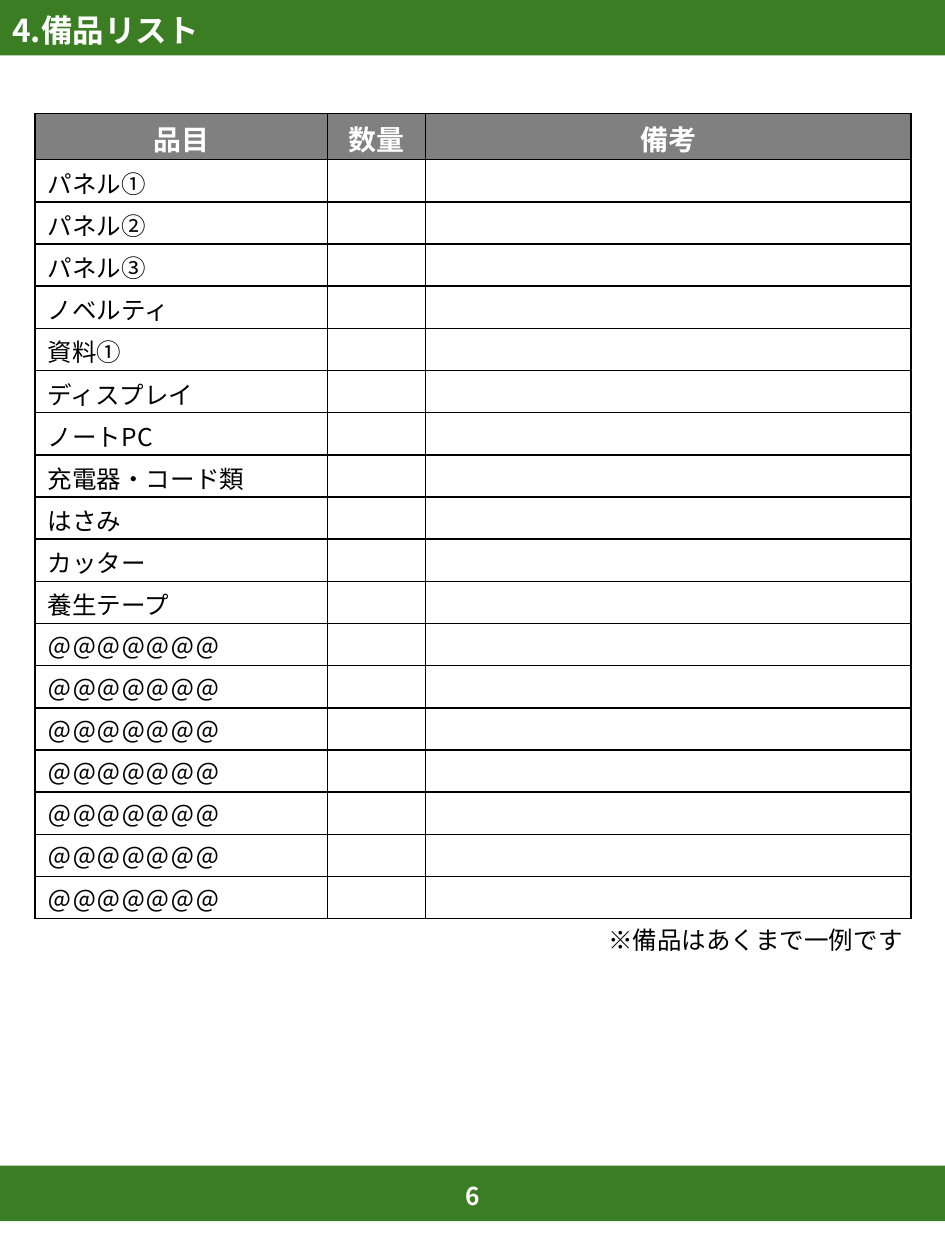
import pptx
import pptx.util
from dataclasses import dataclass
from lxml import etree
from pptx.dml.color import RGBColor
from pptx.enum.shapes import MSO_SHAPE
from pptx.enum.text import MSO_ANCHOR, PP_ALIGN
from pptx.oxml.ns import qn
from pptx.util import Cm


@dataclass(frozen=True)
class Theme:
    font: str = "Noto Sans CJK JP"
    green: str = "3B7D23"
    grey: str = "808080"
    white: str = "FFFFFF"
    black: str = "000000"
    title: int = 18
    head: int = 16
    body: int = 14


T = Theme()
HEADERS = ["品目", "数量", "備考"]
ITEMS = ["パネル①", "パネル②", "パネル③", "ノベルティ", "資料①", "ディスプレイ",
         "ノートPC", "充電器・コード類", "はさみ", "カッター", "養生テープ"]
ITEMS += ["＠＠＠＠＠＠＠"] * 7
COLUMNS = [5.89, 1.98, 9.78]
HEAD_HEIGHT, ROW_HEIGHT = 0.93, 0.85


def rgb(color):
    return RGBColor.from_string(color)


def write(tf, text, size, color, bold=False, align=PP_ALIGN.LEFT):
    p = tf.paragraphs[0]
    p.text = text
    p.alignment = align
    f = p.font
    f.size, f.bold, f.name = pptx.util.Pt(size), bold, T.font
    f.color.rgb = rgb(color)
    # East Asian typeface, next to the Latin one
    latin = p._p.find(".//" + qn("a:latin"))
    ea = etree.Element(qn("a:ea"), typeface=T.font)
    latin.addnext(ea)


def add_text(s, x, y, w, h, text, size, color, bold=False, align=PP_ALIGN.LEFT):
    tf = s.shapes.add_textbox(Cm(x), Cm(y), Cm(w), Cm(h)).text_frame
    tf.word_wrap = True
    tf.vertical_anchor = MSO_ANCHOR.MIDDLE
    tf.margin_top = tf.margin_bottom = 0
    write(tf, text, size, color, bold, align)


def add_band(s, x, y, w, h, text, size, align):
    sp = s.shapes.add_shape(MSO_SHAPE.RECTANGLE, Cm(x), Cm(y), Cm(w), Cm(h))
    sp.shadow.inherit = False
    sp.fill.solid()
    sp.fill.fore_color.rgb = rgb(T.green)
    sp.line.fill.background()
    add_text(s, x, y + 0.05, w, h, text, size, T.white, True, align)


def style_cell(cell, fill):
    cell.vertical_anchor = MSO_ANCHOR.TOP
    cell.margin_top, cell.margin_bottom = Cm(0.1), Cm(0.02)
    # Borders come before the fill in the cell properties
    tcPr = cell._tc.get_or_add_tcPr()
    for side in ("a:lnL", "a:lnR", "a:lnT", "a:lnB"):
        ln = etree.SubElement(tcPr, qn(side), w=str(pptx.util.Pt(1)))
        paint = etree.SubElement(ln, qn("a:solidFill"))
        etree.SubElement(paint, qn("a:srgbClr"), val=T.black)
    cell.fill.solid()
    cell.fill.fore_color.rgb = rgb(fill)


def add_equipment_table(s, x, y):
    rows = [HEADERS] + [[item, "", ""] for item in ITEMS]
    heights = [HEAD_HEIGHT] + [ROW_HEIGHT] * len(ITEMS)
    table = s.shapes.add_table(len(rows), len(COLUMNS), Cm(x), Cm(y),
                               Cm(sum(COLUMNS)), Cm(sum(heights))).table
    for column, width in zip(table.columns, COLUMNS):
        column.width = Cm(width)
    for i, (row, height) in enumerate(zip(rows, heights)):
        table.rows[i].height = Cm(height)
        for j, text in enumerate(row):
            cell = table.cell(i, j)
            if i == 0:
                style_cell(cell, T.grey)
                write(cell.text_frame, text, T.head, T.white, True, PP_ALIGN.CENTER)
            else:
                style_cell(cell, T.white)
                write(cell.text_frame, text, T.body, T.black)


def main():
    prs = pptx.Presentation()
    prs.slide_width, prs.slide_height = Cm(19.05), Cm(25.4)
    s = prs.slides.add_slide(prs.slide_layouts[6])

    # Title and page number bands
    add_band(s, 0, 0, 19.05, 1.12, "4.備品リスト", T.title, PP_ALIGN.LEFT)
    add_band(s, 0, 23.5, 19.05, 1.12, "6", T.body, PP_ALIGN.CENTER)

    # Equipment list with its note
    add_equipment_table(s, 0.71, 2.29)
    add_text(s, 12.01, 18.52, 7.04, 0.86, "※備品はあくまで一例です", T.body, T.black)

    prs.save("out.pptx")


if __name__ == "__main__":
    main()
